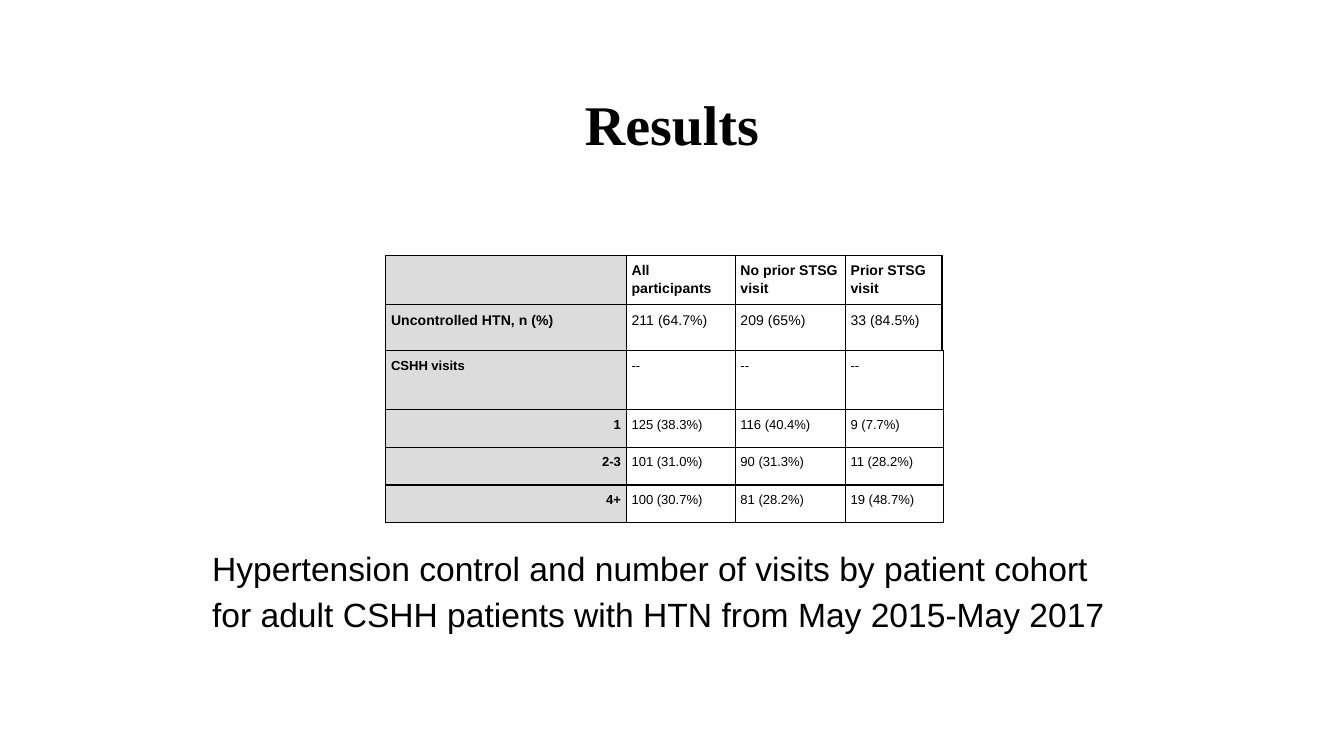
import pptx
import pptx.util
import pptx.dml.color
import pptx.enum.text
from lxml import etree
from pptx.oxml.ns import qn

Inches, Pt = pptx.util.Inches, pptx.util.Pt
ALIGN = pptx.enum.text.PP_ALIGN
ANCHOR = pptx.enum.text.MSO_ANCHOR

# Content
TITLE = "Results"
CAPTION = [
    "Hypertension control and number of visits by patient cohort",
    "for adult CSHH patients with HTN from May 2015-May 2017",
]
CONTROL = [
    ["", "All participants", "No prior STSG visit", "Prior STSG visit"],
    ["Uncontrolled HTN, n (%)", "211 (64.7%)", "209 (65%)", "33 (84.5%)"],
]
VISITS = [
    ["CSHH visits", "--", "--", "--"],
    ["1", "125 (38.3%)", "116 (40.4%)", "9 (7.7%)"],
    ["2-3", "101 (31.0%)", "90 (31.3%)", "11 (28.2%)"],
    ["4+", "100 (30.7%)", "81 (28.2%)", "19 (48.7%)"],
]
TABLES = [
    dict(data=CONTROL, top=1.9, cols=[1.79, 0.81, 0.82, 0.72],
         rows=[0.34, 0.34], size=7.5, head=True),
    dict(data=VISITS, top=2.61, cols=[1.79, 0.81, 0.82, 0.73],
         rows=[0.44, 0.28, 0.28, 0.28], size=7, head=False),
]
LEFT = 2.87
WIDE = 10
BLACK, GREY, WHITE = "000000", "DCDCDC", "FFFFFF"


def color(code):
    return pptx.dml.color.RGBColor.from_string(code)


def style(para, size, face="Arial", bold=False):
    for run in para.runs:
        run.font.size = Pt(size)
        run.font.name = face
        run.font.bold = bold
        run.font.color.rgb = color(BLACK)


def inset(frame, gap):
    frame.margin_left = frame.margin_right = Inches(gap)
    frame.margin_top = frame.margin_bottom = Inches(gap)


def place(shape, left, top, width, height):
    shape.left, shape.top = Inches(left), Inches(top)
    shape.width, shape.height = Inches(width), Inches(height)


def border(cell):
    props = cell._tc.get_or_add_tcPr()
    for spot, side in enumerate(("lnL", "lnR", "lnT", "lnB")):
        line = etree.Element(qn("a:" + side), w=str(Pt(0.75)))
        fill = etree.SubElement(line, qn("a:solidFill"))
        etree.SubElement(fill, qn("a:srgbClr"), val=BLACK)
        props.insert(spot, line)


def fill_cell(cell, text, size, bold, label):
    cell.text = text
    cell.margin_left = cell.margin_right = Inches(0.04)
    cell.margin_top = cell.margin_bottom = Inches(0.04)
    if label:
        cell.fill.solid()
        cell.fill.fore_color.rgb = color(GREY)
    else:
        cell.fill.background()
    border(cell)
    para = cell.text_frame.paragraphs[0]
    para.line_spacing = 1.15
    style(para, size, bold=bold)
    if not text:  # keeps the empty cell from stretching its row
        etree.SubElement(para._p, qn("a:endParaRPr"), sz=str(int(size * 100)))
    return para


def add_grid(slide, data, top, cols, rows, size, head):
    frame = slide.shapes.add_table(
        len(rows), len(cols), Inches(LEFT), Inches(top),
        Inches(sum(cols)), Inches(sum(rows)))
    table = frame.table
    for col, width in zip(table.columns, cols):
        col.width = Inches(width)
    for row, height in zip(table.rows, rows):
        row.height = Inches(height)
    for r, line in enumerate(data):
        for c, text in enumerate(line):
            label = c == 0
            bold = label or (head and r == 0)
            para = fill_cell(table.cell(r, c), text, size, bold, label)
            # Visit counts sit at the right of the label column
            if label and r > 0 and not head:
                para.alignment = ALIGN.RIGHT


def main():
    deck = pptx.Presentation()
    # Widescreen, 16 to 9
    deck.slide_width, deck.slide_height = Inches(WIDE), Inches(WIDE * 9 / 16)
    slide = deck.slides.add_slide(deck.slide_layouts[5])
    slide.background.fill.solid()
    slide.background.fill.fore_color.rgb = color(WHITE)

    # Title
    title = slide.shapes.title
    place(title, 0.34, 0.49, 9.32, 0.85)
    frame = title.text_frame
    frame.text = TITLE
    frame.vertical_anchor = ANCHOR.MIDDLE
    inset(frame, 0.07)
    frame.paragraphs[0].alignment = ALIGN.CENTER
    style(frame.paragraphs[0], 30, "Times New Roman", True)

    # Caption
    box = slide.shapes.add_textbox(0, 0, 0, 0)
    place(box, 1.48, 3.93, 6.95, 0.85)
    frame = box.text_frame
    frame.word_wrap = True
    inset(frame, 0.1)
    frame.text = "\n".join(CAPTION)
    for para in frame.paragraphs:
        para.line_spacing = 1.15
        style(para, 18)

    # Tables
    for item in TABLES:
        add_grid(slide, **item)

    deck.save("out.pptx")


if __name__ == "__main__":
    main()
